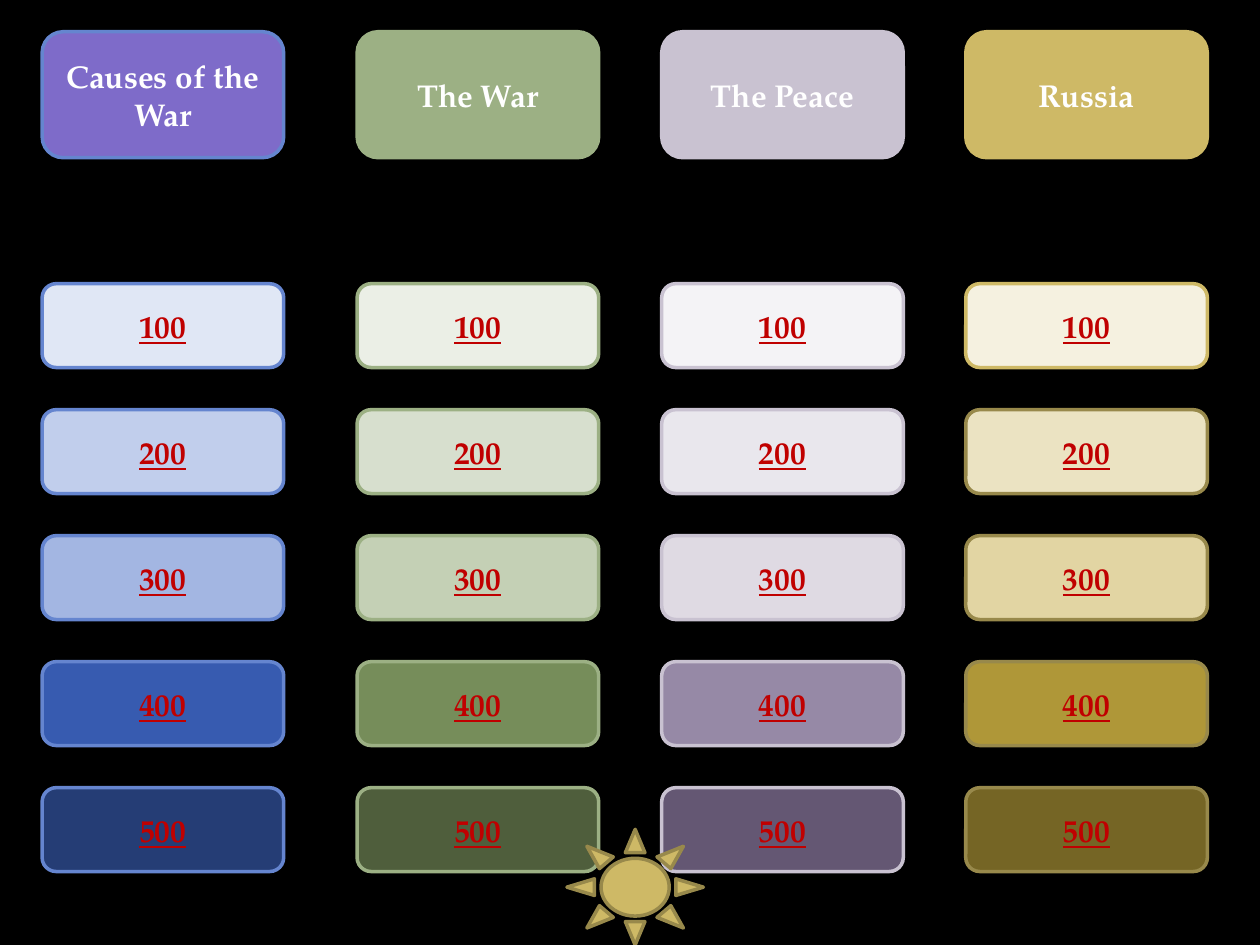
from pptx import Presentation
from pptx import util as u
from pptx.dml.color import RGBColor
from pptx.enum import shapes, text

COLORS = {
    "background": "000000", "heading": "FFFFFF", "points": "C00000",
    "blue": "6585CF", "violet": "7E6BC9", "green": "9CB084",
    "lilac": "C9C2D1", "gold": "CEB966", "dark gold": "98894B",
}
# name, left in cm, heading fill, heading line, lines and fills of the tiles
CATEGORIES = [
    ("Causes of the War", 0.85, "violet", "blue", ["blue"] * 5,
     ["E0E7F5", "C1CEEC", "A3B6E2", "375BB0", "253D75"]),
    ("The War", 7.2, "green", "green", ["green"] * 5,
     ["EBEFE6", "D7DFCE", "C4D0B5", "768D5A", "4F5E3C"]),
    ("The Peace", 13.34, "lilac", "lilac", ["lilac"] * 5,
     ["F4F3F6", "E9E7ED", "DFDAE3", "9689A6", "645773"]),
    ("Russia", 19.47, "gold", "gold", ["gold"] + ["dark gold"] * 4,
     ["F5F1E0", "EBE3C2", "E2D5A3", "AF9738", "756525"]),
]
FONT = {"name": "TeX Gyre Pagella", "size": u.Pt(18), "bold": True}
TILE_WIDTH, HEADING_HEIGHT, TILE_HEIGHT = 4.87, 2.54, 1.69
HEADING_TOP, FIRST_TOP, ROW_STEP = 0.64, 5.72, 2.54


def rgb(color):
    """Turn a colour name or a hex string into an RGBColor."""
    return RGBColor.from_string(COLORS.get(color, color))


def add_shape(s, kind, box, fill, line):
    sp = s.shapes.add_shape(kind, *(u.Cm(v) for v in box))
    sp.shadow.inherit = False
    sp.fill.solid()
    sp.fill.fore_color.rgb = rgb(fill)
    sp.line.color.rgb = rgb(line)
    sp.line.width = u.Pt(2)
    return sp


def add_tile(s, label, box, fill, line, color, underline=False):
    sp = add_shape(s, shapes.MSO_SHAPE.ROUNDED_RECTANGLE, box, fill, line)
    tf = sp.text_frame
    tf.word_wrap = True
    tf.vertical_anchor = text.MSO_ANCHOR.MIDDLE
    p = tf.paragraphs[0]
    p.alignment = text.PP_ALIGN.CENTER
    r = p.add_run()
    r.text = label
    for key, value in FONT.items():
        setattr(r.font, key, value)
    if underline:
        r.font.underline = True
    r.font.color.rgb = rgb(color)


def add_category(s, name, left, fill, line, tile_lines, tile_fills):
    """Add one column: its heading and the point tiles under it."""
    add_tile(s, name, (left, HEADING_TOP, TILE_WIDTH, HEADING_HEIGHT),
             fill, line, "heading")
    for row, (tile_fill, tile_line) in enumerate(zip(tile_fills, tile_lines)):
        box = (left, FIRST_TOP + row * ROW_STEP, TILE_WIDTH, TILE_HEIGHT)
        add_tile(s, str(100 * (row + 1)), box, tile_fill, tile_line,
                 "points", underline=True)


def main():
    prs = Presentation()
    prs.slide_width, prs.slide_height = u.Cm(25.4), u.Cm(19.05)
    s = prs.slides.add_slide(prs.slide_layouts[6])
    s.background.fill.solid()
    s.background.fill.fore_color.rgb = rgb("background")
    for category in CATEGORIES:
        add_category(s, *category)
    add_shape(s, shapes.MSO_SHAPE.SUN, (11.43, 16.72, 2.75, 2.33),
              "gold", "dark gold")
    prs.save("out.pptx")


if __name__ == "__main__":
    main()
